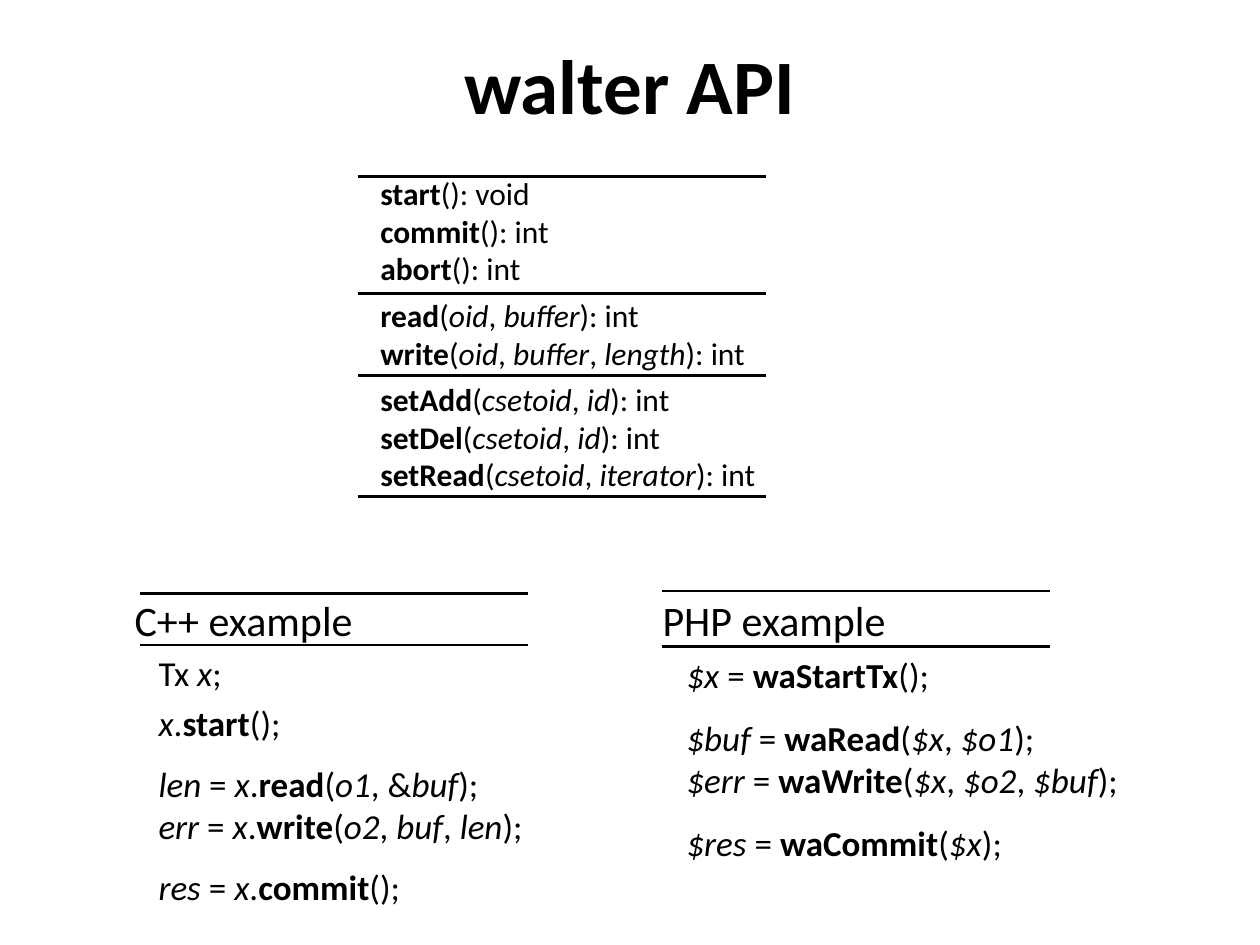
from dataclasses import dataclass

from pptx import Presentation
from pptx.dml.color import RGBColor
from pptx.enum.shapes import MSO_CONNECTOR as Link
from pptx.enum.text import MSO_ANCHOR as Anchor, PP_ALIGN as Align
from pptx.oxml.ns import qn
from pptx.slide import Slide
from pptx.text.text import _Paragraph as Para
from pptx.util import Emu, Pt
from lxml.etree import SubElement

FONT = "Calibri"
INK = "000000"
INDENT = 19


@dataclass
class Line:
    """One line of text: *bold* and _italic_ are marked; gap is points above."""
    text: str
    gap: float = 0
    size: int = 20
    indent: int = INDENT


@dataclass
class Block:
    left: int
    top: int
    width: int
    height: int
    lines: list[Line]


@dataclass
class Rule:
    left: int
    right: int
    y: int


def px(n: int) -> Emu:
    """100 px to the inch."""
    return Emu(n * 9144)


def color(code: str) -> RGBColor:
    return RGBColor.from_string(code)


def add_run(para: Para, text: str, size: int, bold: bool, italic: bool) -> None:
    run = para.add_run()
    run.text = text
    font = run.font
    font.name, font.size = FONT, Pt(size)
    font.bold, font.italic = bold, italic
    font.color.rgb = color(INK)


def add_line(para: Para, line: Line) -> None:
    para.space_before = Pt(line.gap)
    if line.indent:
        props = para._p.get_or_add_pPr()
        props.set("marL", str(px(line.indent)))
        props.set("indent", "0")
    for i, part in enumerate(line.text.split("*")):
        for j, bit in enumerate(part.split("_")):
            if bit:
                add_run(para, bit, line.size, i % 2 == 1, j % 2 == 1)


def add_block(slide: Slide, block: Block, align: Align = Align.LEFT,
              anchor: Anchor = Anchor.TOP) -> None:
    box = slide.shapes.add_textbox(
        px(block.left), px(block.top), px(block.width), px(block.height))
    frame = box.text_frame
    frame.word_wrap = True
    frame.vertical_anchor = anchor
    for i, line in enumerate(block.lines):
        para = frame.add_paragraph() if i else frame.paragraphs[0]
        para.alignment = align
        add_line(para, line)


def add_rule(slide: Slide, rule: Rule) -> None:
    link = slide.shapes.add_connector(
        Link.STRAIGHT, px(rule.left), px(rule.y), px(rule.right), px(rule.y))
    link.line.color.rgb = color(INK)
    link.line.width = Pt(1.5)
    SubElement(link._element.spPr, qn("a:effectLst"))


def call(text: str, gap: float = 0) -> Line:
    return Line(text, gap, 18, 0)


TITLE = Block(50, 4, 900, 125, [Line("*walter API*", 0, 44, 0)])

API = Block(292, 133, 350, 266, [
    call("*start*(): void"),
    call("*commit*(): int"),
    call("*abort*(): int"),
    call("*read*(_oid_, _buffer_): int", 4.9),
    call("*write*(_oid_, _buffer_, _length_): int"),
    call("*setAdd*(_csetoid_, _id_): int", 4.9),
    call("*setDel*(_csetoid_, _id_): int"),
    call("*setRead*(_csetoid_, _iterator_): int"),
])

CPP = Block(97, 467, 350, 264, [
    Line("C++ example", 4.8, 24, 0),
    Line("Tx _x_;", 4),
    Line("_x_.*start*();", 4),
    Line("_len_ = _x_.*read*(_o1_, &_buf_);", 11),
    Line("_err_ = _x_.*write*(_o2_, _buf_, _len_);"),
    Line("_res_ = _x_.*commit*();", 11),
])

PHP = Block(516, 467, 392, 257, [
    Line("PHP example", 4.8, 24, 0),
    Line("_$x_ = *waStartTx*();", 4.8),
    Line("_$buf_ = *waRead*(_$x_, _$o1_);", 12),
    Line("_$err_ = *waWrite*(_$x_, _$o2_, _$buf_);"),
    Line("_$res_ = *waCommit*(_$x_);", 12),
])

RULES = [
    *(Rule(284, 608, y) for y in (140, 233, 298, 394)),
    *(Rule(111, 419, y) for y in (471, 512)),
    *(Rule(525, 833, y) for y in (469, 513)),
]


def main() -> None:
    deck = Presentation()
    deck.slide_width, deck.slide_height = px(1000), px(750)
    slide = deck.slides.add_slide(deck.slide_layouts[6])
    add_block(slide, TITLE, Align.CENTER, Anchor.MIDDLE)
    for block in (API, CPP, PHP):
        add_block(slide, block)
    for rule in RULES:
        add_rule(slide, rule)
    deck.save("out.pptx")


if __name__ == "__main__":
    main()
